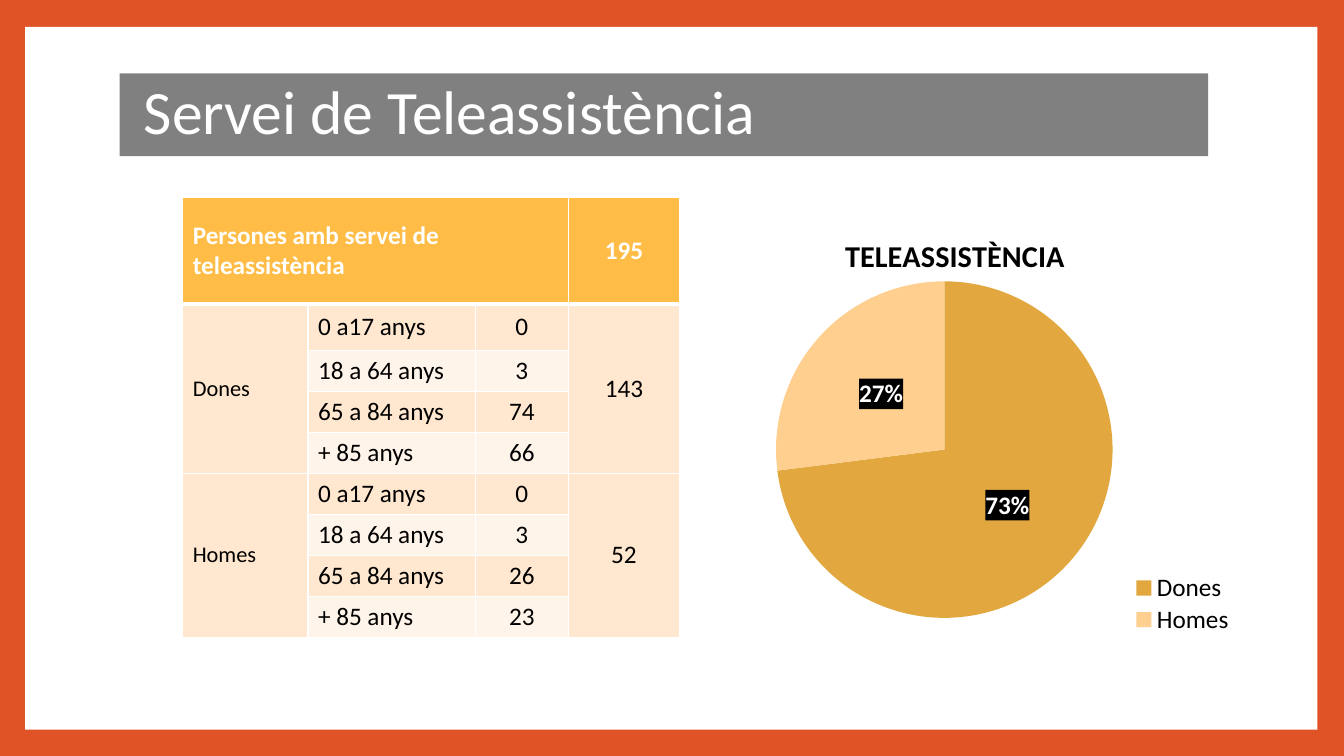
from lxml.etree import SubElement
from pptx import Presentation
from pptx.chart.data import CategoryChartData
from pptx.dml.color import RGBColor
from pptx.enum.chart import XL_CHART_TYPE, XL_LABEL_POSITION, XL_LEGEND_POSITION
from pptx.enum.shapes import MSO_SHAPE
from pptx.enum.text import MSO_ANCHOR, MSO_AUTO_SIZE, PP_ALIGN
from pptx.oxml import parse_xml
from pptx.oxml.ns import nsdecls, qn
from pptx.util import Pt

# Content
TITLE = "Servei de Teleassistència"
TABLE_HEADER = ("Persones amb servei de teleassistència", "195")
AGES = ("0 a17 anys", "18 a 64 anys", "65 a 84 anys", "+ 85 anys")
GROUPS = [
    ("Dones", (0, 3, 74, 66), 143),
    ("Homes", (0, 3, 26, 23), 52),
]
CHART_TITLE = "TELEASSISTÈNCIA"
SHARES = {"Dones": 73, "Homes": 27}


class Theme:
    font = "Calibri"
    frame, white, black, gray = "DF5327", "FFFFFF", "000000", "808080"
    header, bands = "FFBD47", ("FFE8CF", "FFF4E9")
    slices = ("E2A83F", "FFCF90")
    title_size, chart_title_size, text_size, group_size = 44, 21.6, 18, 16


# Geometry in points: left, top, width, height
SLIDE_SIZE = (960, 540)
PANEL_BOX = (18, 19.2, 923, 502)
TITLE_BOX = (85.5, 52.5, 777.5, 59)
TABLE_BOX = (130.5, 141.2, 355, 314.4)
CHART_BOX = (450, 148.3, 453.6, 306)
COLUMN_WIDTHS = (89.5, 119.5, 66.5, 79.5)
HEADER_HEIGHT, FIRST_ROW_HEIGHT, ROW_HEIGHT = 76, 33, 29.3


def points(box):
    return [Pt(length) for length in box]


def paint(fill, color):
    fill.solid()
    fill.fore_color.rgb = RGBColor.from_string(color)


def style_font(font, size, color, bold=False):
    formats = {"name": Theme.font, "size": Pt(size), "bold": bold}
    for name, value in formats.items():
        setattr(font, name, value)
    font.color.rgb = RGBColor.from_string(color)


def add_border(cell, position, side, width):
    line = parse_xml(
        f'<a:{side} {nsdecls("a")} w="{Pt(width)}"><a:solidFill>'
        f'<a:srgbClr val="{Theme.white}"/></a:solidFill></a:{side}>'
    )
    cell._tc.get_or_add_tcPr().insert(position, line)


def write_cell(cell, text, size=Theme.text_size, color=Theme.black, bold=False, centered=True):
    cell.text = str(text)
    cell.vertical_anchor = MSO_ANCHOR.MIDDLE
    paragraph = cell.text_frame.paragraphs[0]
    paragraph.alignment = PP_ALIGN.CENTER if centered else PP_ALIGN.LEFT
    style_font(paragraph.runs[0].font, size, color, bold)


def place_chart_part(part, position, inner=False, **fractions):
    for old_layout in part.findall(qn("c:layout")):
        part.remove(old_layout)
    layout = parse_xml(f'<c:layout {nsdecls("c")}><c:manualLayout/></c:layout>')
    values = {"layoutTarget": "inner"} if inner else {}
    values.update(xMode="edge", yMode="edge", **fractions)
    for name, value in values.items():
        SubElement(layout[0], qn(f"c:{name}")).set("val", str(value))
    part.insert(position, layout)


def add_title(slide):
    title = slide.shapes.title
    title.left, title.top, title.width, title.height = points(TITLE_BOX)
    paint(title.fill, Theme.gray)
    frame = title.text_frame
    frame.text = TITLE
    formats = {
        "margin_left": Pt(17.2),
        "vertical_anchor": MSO_ANCHOR.MIDDLE,
        "auto_size": MSO_AUTO_SIZE.NONE,
        "word_wrap": True,
    }
    for name, value in formats.items():
        setattr(frame, name, value)
    paragraph = frame.paragraphs[0]
    paragraph.alignment = PP_ALIGN.LEFT
    paragraph.line_spacing = 0.9
    style_font(paragraph.runs[0].font, Theme.title_size, Theme.white)
    return title


def add_people_table(slide):
    row_count = 1 + len(GROUPS) * len(AGES)
    table = slide.shapes.add_table(row_count, len(COLUMN_WIDTHS), *points(TABLE_BOX)).table
    for column, width in zip(table.columns, COLUMN_WIDTHS):
        column.width = Pt(width)
    heights = [HEADER_HEIGHT, FIRST_ROW_HEIGHT] + [ROW_HEIGHT] * (row_count - 2)
    for row, height in zip(table.rows, heights):
        row.height = Pt(height)

    # Fills and borders, with a heavier rule under the header
    for row_index, row in enumerate(table.rows):
        color = Theme.bands[(row_index - 1) % 2] if row_index else Theme.header
        top = 3 if row_index == 1 else 1
        bottom = 3 if row_index == 0 else 1
        for cell in row.cells:
            paint(cell.fill, color)
            borders = {"lnL": 1, "lnR": 1, "lnT": top, "lnB": bottom}
            for position, (side, width) in enumerate(borders.items()):
                add_border(cell, position, side, width)

    # Header
    table.cell(0, 0).merge(table.cell(0, 2))
    for column, text in zip((0, 3), TABLE_HEADER):
        write_cell(table.cell(0, column), text, color=Theme.white, bold=True, centered=column > 0)

    # Groups by age
    for group_index, (group, counts, total) in enumerate(GROUPS):
        first = 1 + group_index * len(AGES)
        for column in (0, 3):
            table.cell(first, column).merge(table.cell(first + len(AGES) - 1, column))
        write_cell(table.cell(first, 0), group, Theme.group_size, centered=False)
        write_cell(table.cell(first, 3), total)
        for row_index, (age, count) in enumerate(zip(AGES, counts), first):
            write_cell(table.cell(row_index, 1), age, centered=False)
            write_cell(table.cell(row_index, 2), count)


def add_share_chart(slide):
    data = CategoryChartData()
    data.categories = list(SHARES)
    data.add_series(CHART_TITLE, list(SHARES.values()))
    chart = slide.shapes.add_chart(XL_CHART_TYPE.PIE, *points(CHART_BOX), data).chart
    style_font(chart.font, Theme.text_size, Theme.black)

    # Title and legend
    chart.has_title = True
    chart.chart_title.text_frame.text = CHART_TITLE
    title_run = chart.chart_title.text_frame.paragraphs[0].runs[0]
    style_font(title_run.font, Theme.chart_title_size, Theme.black, bold=True)
    chart.has_legend = True
    chart.legend.position = XL_LEGEND_POSITION.RIGHT
    chart.legend.include_in_layout = False
    style_font(chart.legend.font, Theme.text_size, Theme.black)

    # Slices and percentage labels
    plot = chart.plots[0]
    plot.vary_by_categories = True
    series = plot.series[0]
    for index, color in enumerate(Theme.slices):
        paint(series.points[index].format.fill, color)
    labels = series.data_labels
    formats = {
        "show_percentage": True,
        "show_value": False,
        "number_format": "0%",
        "number_format_is_linked": False,
        "position": XL_LABEL_POSITION.CENTER,
    }
    for name, value in formats.items():
        setattr(labels, name, value)
    style_font(labels.font, Theme.text_size, Theme.white, bold=True)
    label_fill = parse_xml(
        f'<c:spPr {nsdecls("c", "a")}><a:solidFill>'
        f'<a:srgbClr val="{Theme.black}"/></a:solidFill></c:spPr>'
    )
    chart_xml = plot.chart.element if hasattr(plot, "chart") else chart.element
    chart_xml.find(f".//{qn('c:ser')}/{qn('c:dLbls')}/{qn('c:txPr')}").addprevious(label_fill)

    # Layout as fractions of the chart
    title, area, legend = (
        chart_xml.find(f".//{qn(tag)}") for tag in ("c:title", "c:plotArea", "c:legend")
    )
    place_chart_part(title, 1, x=0.33, y=0.05)
    place_chart_part(area, 0, inner=True, x=0.23, y=0.17, w=0.53, h=0.79)
    place_chart_part(legend, 1, x=0.79, y=0.85, w=0.16, h=0.15)


def main():
    presentation = Presentation()
    presentation.slide_width, presentation.slide_height = points(SLIDE_SIZE)
    slide = presentation.slides.add_slide(presentation.slide_layouts[5])
    paint(slide.background.fill, Theme.frame)

    # White panel behind the title
    panel = slide.shapes.add_shape(MSO_SHAPE.RECTANGLE, *points(PANEL_BOX))
    panel.shadow.inherit = False
    paint(panel.fill, Theme.white)
    panel.line.fill.background()
    add_title(slide).element.addprevious(panel.element)

    add_people_table(slide)
    add_share_chart(slide)
    presentation.save("out.pptx")


if __name__ == "__main__":
    main()
